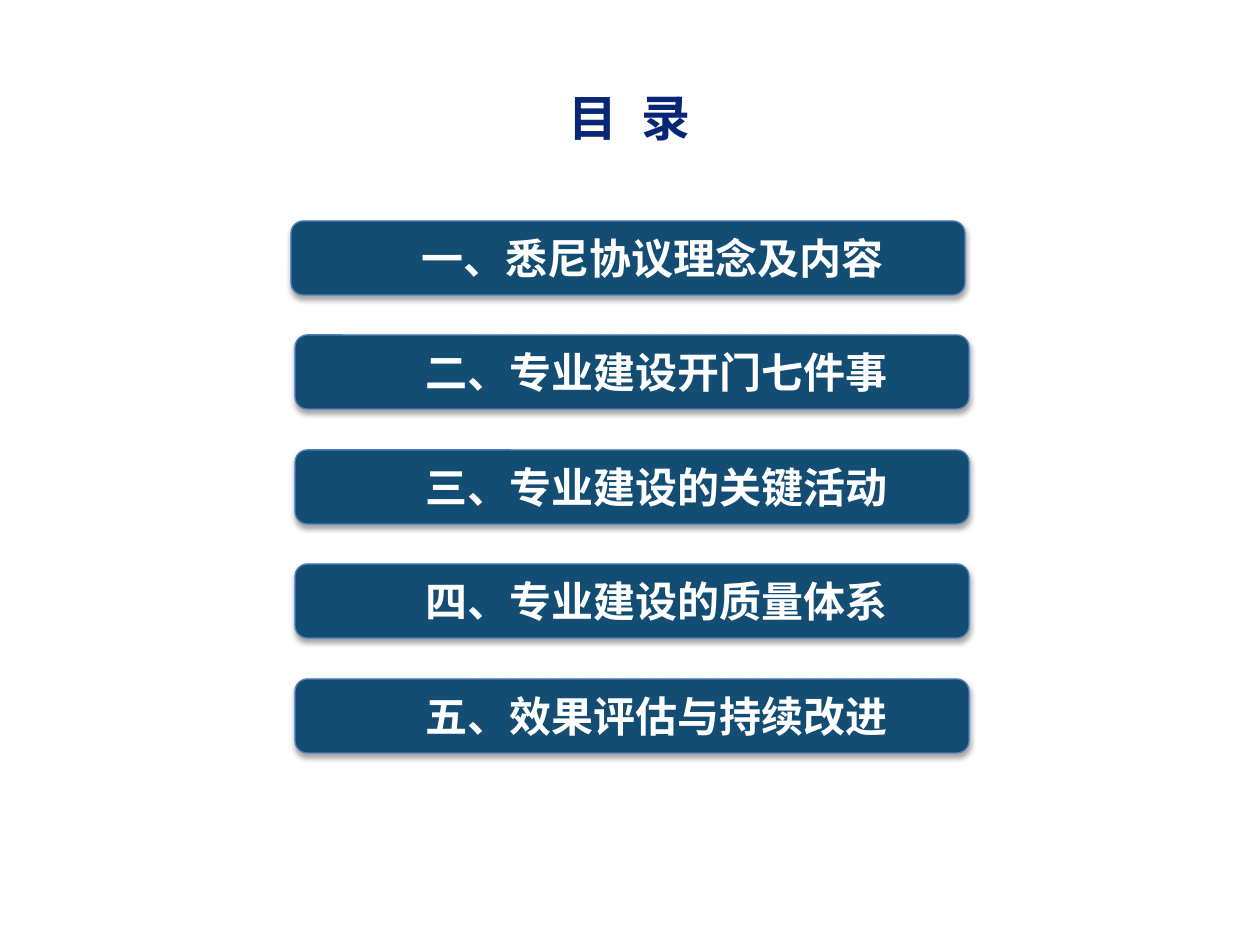
from lxml import etree
from pptx import Presentation
from pptx import util as u
from pptx.dml.color import RGBColor
from pptx.enum import shapes, text
from pptx.oxml.ns import qn

PX = 914400 / 126  # EMU per px


def px(n):
    return u.Emu(round(n * PX))


def rgb(hex_code):
    return RGBColor.from_string(hex_code)


prs = Presentation()
prs.slide_width, prs.slide_height = px(1260), px(945)
s = prs.slides.add_slide(prs.slide_layouts[5])

# Title
title = s.shapes.title
title.left, title.top, title.width, title.height = px(490), px(48), px(279), px(137)
tf = title.text_frame
tf.vertical_anchor = text.MSO_ANCHOR.MIDDLE
p = tf.paragraphs[0]
p.alignment = text.PP_ALIGN.CENTER
for part in ("目", " ", "录"):
    r = p.add_run()
    r.text = part
    r.font.name, r.font.size, r.font.bold = "Arial", u.Pt(28), True
    r.font.color.rgb = rgb("072676")
    if part == " ":  # widen the gap between the two characters
        r.font._element.set("spc", "780")

# Agenda bars, evenly spaced; the first sits slightly to the left
items = [
    "一、悉尼协议理念及内容",
    "二、专业建设开门七件事",
    "三、专业建设的关键活动",
    "四、专业建设的质量体系",
    "五、效果评估与持续改进",
]
FIRST_TOP, LAST_TOP = 221, 679
for i, item in enumerate(items):
    left = 291 if i == 0 else 295
    top = FIRST_TOP + i * (LAST_TOP - FIRST_TOP) // (len(items) - 1)
    sp = s.shapes.add_shape(shapes.MSO_SHAPE.ROUNDED_RECTANGLE,
                            px(left), px(top), px(674), px(74))
    sp.fill.solid()
    sp.fill.fore_color.rgb = rgb("144D73")
    sp.line.color.rgb = rgb("4B7EBC")
    sp.line.width = u.Pt(0.75)

    # Soft shadow straight below
    sp.shadow.inherit = False
    effects = sp._element.spPr.find(qn("a:effectLst"))
    shadow = etree.SubElement(effects, qn("a:outerShdw"), blurRad="40000",
                              dist="23000", dir="5400000", rotWithShape="0")
    color = etree.SubElement(shadow, qn("a:srgbClr"), val="000000")
    etree.SubElement(color, qn("a:alpha"), val="35000")

    # Label
    tf = sp.text_frame
    tf.word_wrap = True
    tf.vertical_anchor = text.MSO_ANCHOR.MIDDLE
    tf.margin_left, tf.margin_right = px(49), 0
    p = tf.paragraphs[0]
    p.alignment = text.PP_ALIGN.CENTER
    r = p.add_run()
    r.text = item
    r.font.name, r.font.size, r.font.bold = "DejaVu Sans", u.Pt(24), True
    r.font.color.rgb = rgb("FFFFFF")

prs.save("out.pptx")
